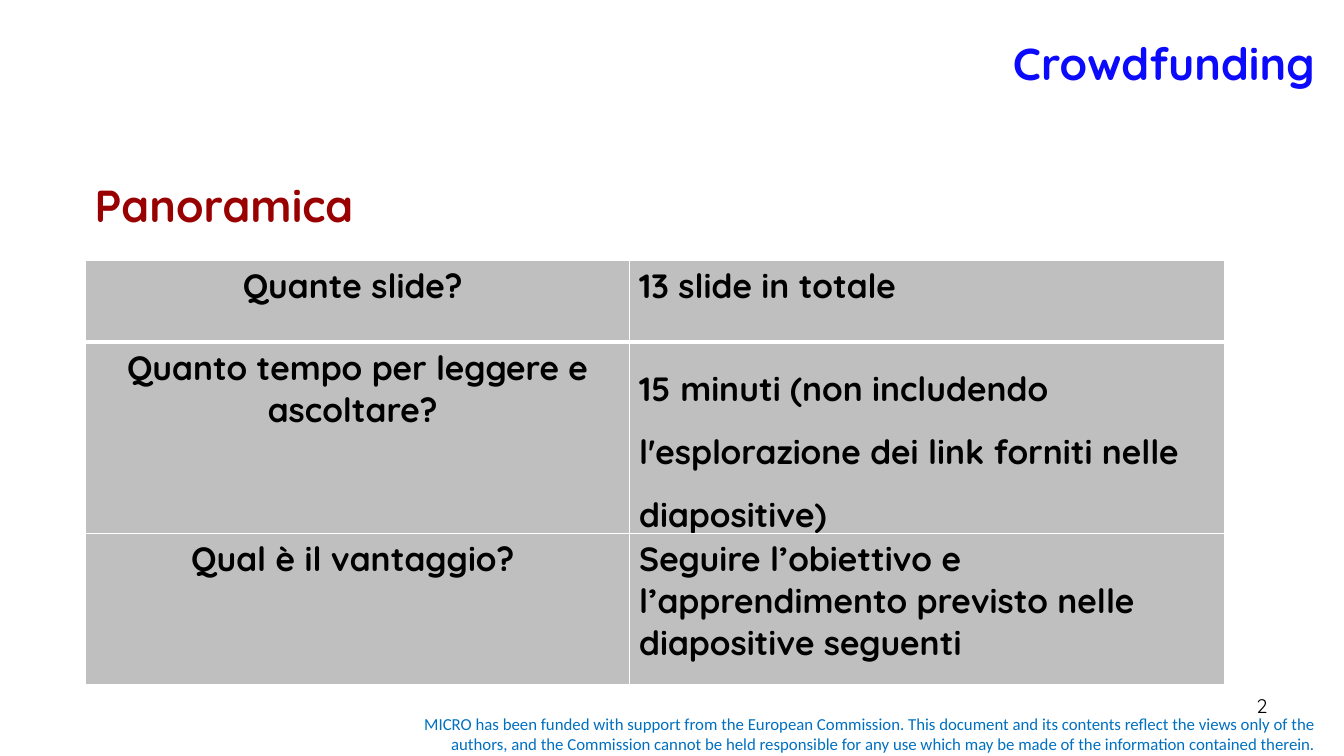
from lxml import etree
from pptx import Presentation
from pptx.dml.color import RGBColor
from pptx.enum.text import MSO_ANCHOR, PP_ALIGN
from pptx.oxml.ns import qn
from pptx.util import Inches, Pt

LEFT, CENTER, RIGHT = PP_ALIGN.LEFT, PP_ALIGN.CENTER, PP_ALIGN.RIGHT
TOP, MIDDLE = MSO_ANCHOR.TOP, MSO_ANCHOR.MIDDLE
FONT = "Quicksand"
FOOTER = (
    "MICRO has been funded with support from the European Commission. "
    "This document and its contents reflect the views only of the authors, "
    "and the Commission cannot be held responsible for any use which may be "
    "made of the information contained therein."
)
COLS = [5.39, 5.91]
ROWS = [
    (0.81, "Quante slide? ", "13 slide in totale", 1),
    (1.38, "Quanto tempo per leggere e ascoltare? ",
     "15 minuti (non includendo l'esplorazione dei link forniti nelle diapositive)", 1.5),
    (1.5, "Qual è il vantaggio? ",
     "Seguire l’obiettivo e l’apprendimento previsto nelle diapositive seguenti", 1),
]


def paint(target, color):
    """Set a colour format from a hex string."""
    target.rgb = RGBColor.from_string(color)


def write(frame, text, color, align=LEFT, space=1, **style):
    """Fill a text frame with one styled paragraph."""
    para = frame.paragraphs[0]
    para.alignment = align
    para.line_spacing = space
    run = para.add_run()
    run.text = text
    for name, value in style.items():
        setattr(run.font, name, value)
    paint(run.font.color, color)


def add_text(slide, box, text, color, align=LEFT, anchor=TOP, **style):
    """Add a wrapping text box."""
    frame = slide.shapes.add_textbox(*map(Inches, box)).text_frame
    frame.word_wrap = True
    frame.vertical_anchor = anchor
    write(frame, text, color, align, **style)


def add_edges(cell, color, widths):
    """Draw the borders of a cell, given left, right, top and bottom widths."""
    props = cell._tc.get_or_add_tcPr()
    for index, (side, width) in enumerate(zip("LRTB", widths)):
        line = etree.Element(qn(f"a:ln{side}"), w=str(Pt(width)))
        fill = etree.SubElement(line, qn("a:solidFill"))
        etree.SubElement(fill, qn("a:srgbClr"), val=color)
        props.insert(index, line)


def add_grid(slide, left, top):
    """Add the table of questions and answers."""
    height = sum(row[0] for row in ROWS)
    box = map(Inches, (left, top, sum(COLS), height))
    table = slide.shapes.add_table(len(ROWS), len(COLS), *box).table
    for col, width in zip(table.columns, COLS):
        col.width = Inches(width)
    for r, (height, ask, reply, space) in enumerate(ROWS):
        table.rows[r].height = Inches(height)
        for c, (text, align, gap) in enumerate([(ask, CENTER, 1), (reply, LEFT, space)]):
            cell = table.cell(r, c)
            cell.fill.solid()
            paint(cell.fill.fore_color, "BFBFBF")
            add_edges(cell, "FFFFFF", (1, 1, 1, 1 if r else 3))
            write(cell.text_frame, text, "000000", align, gap,
                  name=FONT, size=Pt(24), bold=True)


def main():
    """Build the slide and save it."""
    deck = Presentation()
    deck.slide_width, deck.slide_height = Inches(13.33), Inches(7.5)
    slide = deck.slides.add_slide(deck.slide_layouts[6])
    head = {"name": FONT, "size": Pt(32), "bold": True}
    add_text(slide, (3.75, 7.03, 9.4, 0.5), FOOTER, "0070C0", RIGHT, MIDDLE,
             name="Calibri", size=Pt(12))
    add_text(slide, (1.14, 0, 12, 1.25), "Crowdfunding", "0B0AFD", RIGHT, MIDDLE, **head)
    add_grid(slide, 0.85, 2.58)
    add_text(slide, (9.56, 6.83, 3.11, 0.52), "2", "000000", RIGHT,
             name=FONT, size=Pt(14))
    add_text(slide, (0.84, 1.71, 2.9, 0.64), "Panoramica", "990000", **head)
    deck.save("out.pptx")


if __name__ == "__main__":
    main()
